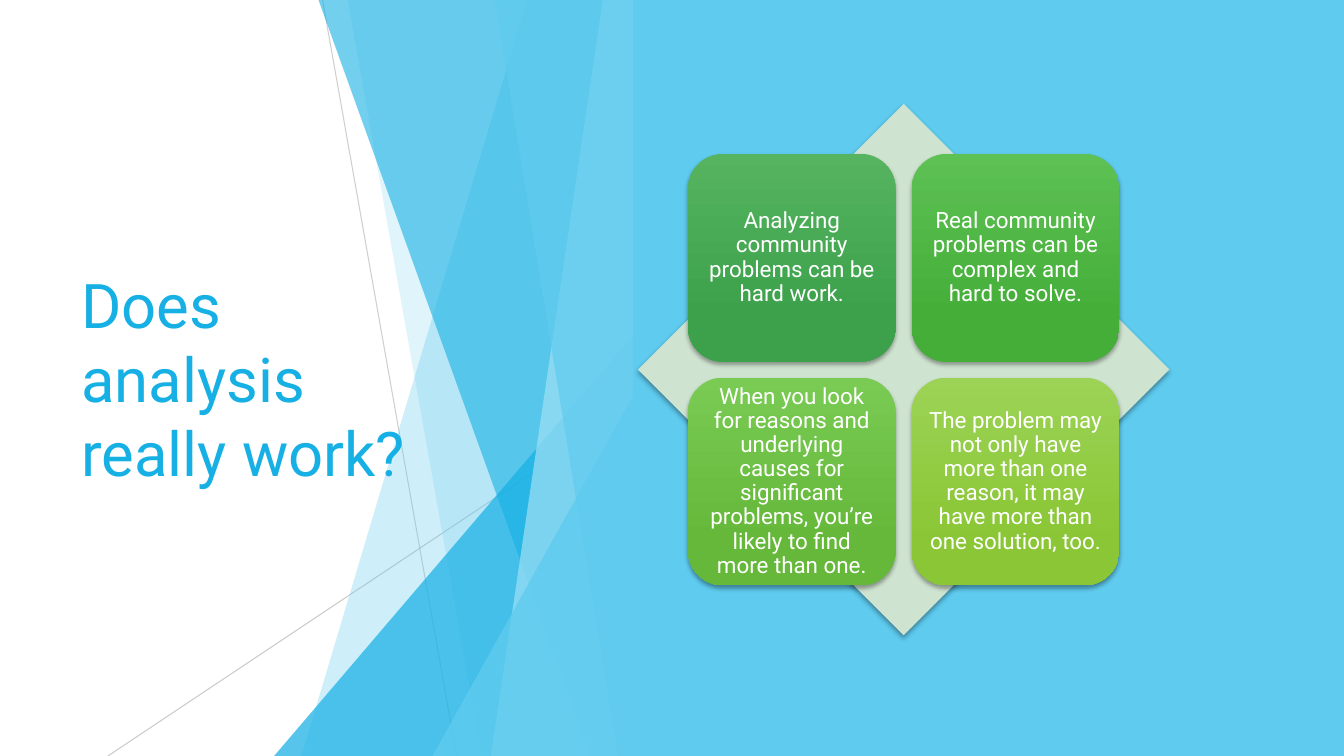
"""Build a slide with a faceted blue backdrop, a title and four tiles on a diamond."""
from lxml import etree
from pptx import Presentation
from pptx.dml.color import RGBColor
from pptx.enum.shapes import MSO_CONNECTOR, MSO_SHAPE
from pptx.enum.text import MSO_ANCHOR, PP_ALIGN
from pptx.oxml.ns import qn
from pptx.util import Pt

STRAIGHT = MSO_CONNECTOR.STRAIGHT
RECTANGLE = MSO_SHAPE.RECTANGLE
DIAMOND = MSO_SHAPE.DIAMOND
TRIANGLE = MSO_SHAPE.ISOSCELES_TRIANGLE
ROUNDED = MSO_SHAPE.ROUNDED_RECTANGLE
MIDDLE = MSO_ANCHOR.MIDDLE
CENTER = PP_ALIGN.CENTER

TITLE = "Does analysis really work?"
TILES = [
    ("Analyzing community problems can be hard work.", "56B461", "3CA14A"),
    ("Real community problems can be complex and hard to solve.", "5DC154", "45AE39"),
    ("When you look for reasons and underlying causes for significant problems, "
     "you’re likely to find more than one.", "79CB54", "65B839"),
    ("The problem may not only have more than one reason, "
     "it may have more than one solution, too.", "9CD356", "8AC635"),
]
THEME = {
    "font": "Roboto", "title_size": 44, "tile_size": 16,
    "accent": "17B0E4", "sky": "5FCBEF", "pale": "9FE0F5",
    "line": "BFBFBF", "diamond": "CFE4D0", "tile_text": "FFFFFF", "shadow": "000000",
}

WIDTH, HEIGHT = 960, 540
PANEL_LEFT = 452.16
TITLE_BOX = (51.12, 108.72, 279.36, 322.56)
RULES = [((230.4, 0), (326.16, HEIGHT), 75), ((PANEL_LEFT, 290.16), (77.04, HEIGHT), 80)]
FACETS = [
    ("band", 376.56, 215.28, "sky", 30),
    ("band", 248.4, 344.16, "sky", 20),
    ("wedge", 195.84, 239.76, "accent", 72),
    ("band", 227.52, 421.92, "accent", 60),
    ("band", 430.56, 350.64, "pale", 70),
    ("band", 353.52, 441.36, "sky", 65),
    ("wedge", 308.88, 282.96, "sky", 80),
]
CENTER_X, CENTER_Y = 645.5, 264
DIAMOND_SIZE, TILE_SIZE, TILE_GAP = 379.5, 148.3, 11.5
TILE_INSET = 5


def color(value):
    return RGBColor.from_string(value)


def set_opacity(shape, percent):
    element = next(shape._element.iter(qn("a:srgbClr")))
    etree.SubElement(element, qn("a:alpha"), val=str(percent * 1000))


def add_shadow(shape):
    effects = shape._element.spPr.find(qn("a:effectLst"))
    shadow = etree.SubElement(effects, qn("a:outerShdw"), blurRad=str(Pt(3)),
                              dist=str(Pt(2)), dir="5400000", rotWithShape="0")
    tint = etree.SubElement(shadow, qn("a:srgbClr"), val=THEME["shadow"])
    etree.SubElement(tint, qn("a:alpha"), val="35000")


def finish(shape, fill=None):
    shape.shadow.inherit = False
    shape.line.fill.background()
    if fill:
        shape.fill.solid()
        shape.fill.fore_color.rgb = color(fill)
    return shape


def add_preset(slide, kind, box, fill=None):
    return finish(slide.shapes.add_shape(kind, *map(Pt, box)), fill)


def add_band(slide, top_x, bottom_x, fill):
    builder = slide.shapes.build_freeform(Pt(top_x), 0)
    corners = [(PANEL_LEFT, 0), (PANEL_LEFT, HEIGHT), (bottom_x, HEIGHT)]
    builder.add_line_segments([(Pt(x), Pt(y)) for x, y in corners])
    return finish(builder.convert_to_shape(), fill)


def add_wedge(slide, left, top, fill):
    box = (left, top, PANEL_LEFT - left, HEIGHT - top)
    wedge = add_preset(slide, TRIANGLE, box, fill)
    wedge.adjustments[0] = 1
    return wedge


def add_rule(slide, start, end, opacity):
    rule = slide.shapes.add_connector(STRAIGHT, *map(Pt, start + end))
    rule.line.color.rgb = color(THEME["line"])
    rule.line.width = Pt(0.75)
    set_opacity(rule, opacity)
    etree.SubElement(rule._element.spPr, qn("a:effectLst"))


def write_text(shape, text, size, text_color):
    frame = shape.text_frame
    frame.word_wrap = True
    frame.vertical_anchor = MIDDLE
    paragraph = frame.paragraphs[0]
    paragraph.text = text
    paragraph.font.name = THEME["font"]
    paragraph.font.size = Pt(size)
    paragraph.font.color.rgb = color(text_color)
    return frame


def add_tile(slide, index, text, top_color, bottom_color):
    row, column = divmod(index, 2)
    pitch = TILE_SIZE + TILE_GAP
    first = TILE_SIZE + TILE_GAP / 2
    box = (CENTER_X - first + column * pitch, CENTER_Y - first + row * pitch,
           TILE_SIZE, TILE_SIZE)
    tile = add_preset(slide, ROUNDED, box)
    tile.fill.gradient()
    tile.fill.gradient_angle = 270
    stops = zip(tile.fill.gradient_stops, (0, 0.78), (top_color, bottom_color))
    for stop, position, value in stops:
        stop.position = position
        stop.color.rgb = color(value)
    add_shadow(tile)
    frame = write_text(tile, text, THEME["tile_size"], THEME["tile_text"])
    frame.margin_left = frame.margin_right = Pt(TILE_INSET)
    frame.margin_top = frame.margin_bottom = Pt(TILE_INSET)
    frame.paragraphs[0].alignment = CENTER
    frame.paragraphs[0].line_spacing = 0.9


def main():
    presentation = Presentation()
    presentation.slide_width, presentation.slide_height = Pt(WIDTH), Pt(HEIGHT)
    slide = presentation.slides.add_slide(presentation.slide_layouts[6])
    for start, end, opacity in RULES:
        add_rule(slide, start, end, opacity)
    builders = {"band": add_band, "wedge": add_wedge}
    for kind, first, second, fill, opacity in FACETS:
        set_opacity(builders[kind](slide, first, second, THEME[fill]), opacity)
    title = slide.shapes.add_textbox(*map(Pt, TITLE_BOX))
    write_text(title, TITLE, THEME["title_size"], THEME["accent"])
    panel_box = (PANEL_LEFT, 0, WIDTH - PANEL_LEFT, HEIGHT)
    add_preset(slide, RECTANGLE, panel_box, THEME["sky"])
    half = DIAMOND_SIZE / 2
    diamond_box = (CENTER_X - half, CENTER_Y - half, DIAMOND_SIZE, DIAMOND_SIZE)
    add_shadow(add_preset(slide, DIAMOND, diamond_box, THEME["diamond"]))
    for index, tile in enumerate(TILES):
        add_tile(slide, index, *tile)
    presentation.save("out.pptx")


if __name__ == "__main__":
    main()
